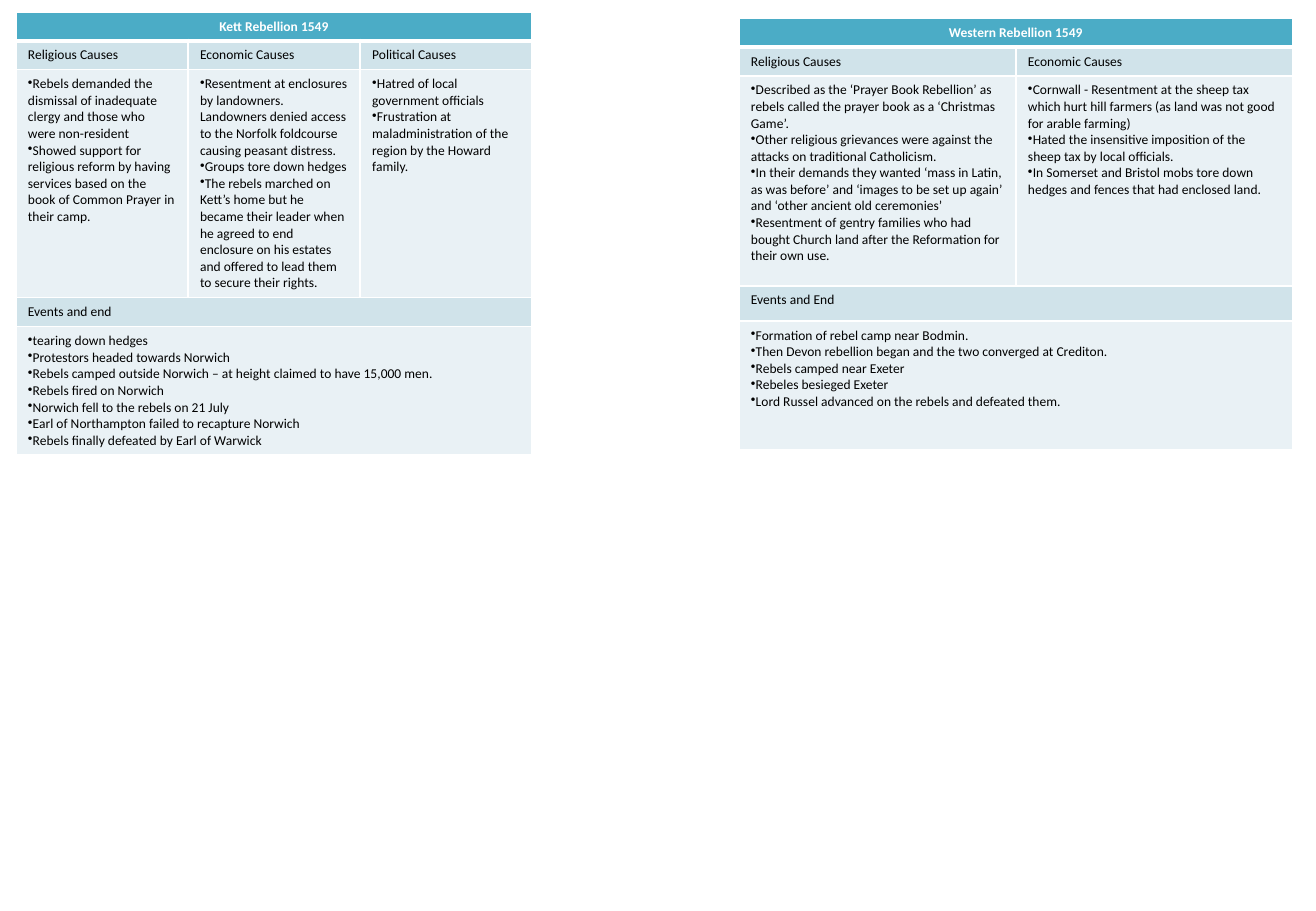
from lxml import etree
from pptx import Presentation, util as u
from pptx.dml.color import RGBColor
from pptx.enum import text
from pptx.oxml import ns

HUES = {"head": "4BACC6", "label": "D0E3EA", "body": "E9F1F5",
        "white": "FFFFFF", "black": "000000"}


def edge(cell, side, width):
    line = etree.Element(ns.qn("a:ln" + side), w=str(u.Pt(width)))
    fill = etree.SubElement(line, ns.qn("a:solidFill"))
    etree.SubElement(fill, ns.qn("a:srgbClr"), val=HUES["white"])
    cell._tc.get_or_add_tcPr().insert("LRTB".index(side), line)


def write(cell, lines, kind):
    # Header is bold, white and centred; body lines carry bullets
    head = kind == "head"
    if head:
        cell.vertical_anchor = text.MSO_ANCHOR.MIDDLE
    frame = cell.text_frame
    for i, line in enumerate(lines):
        para = frame.add_paragraph() if i else frame.paragraphs[0]
        para.alignment = text.PP_ALIGN.CENTER if head else text.PP_ALIGN.LEFT
        if kind == "body":
            etree.SubElement(para._p.get_or_add_pPr(), ns.qn("a:buChar"), char="•")
        run = para.add_run()
        run.text = line
        run.font.name = "Calibri"
        run.font.size = u.Pt(8)
        run.font.bold = head
        run.font.color.rgb = RGBColor.from_string(HUES["white" if head else "black"])


# Content: each row is a list of cells, each cell a list of lines
kett = [
    [["Kett Rebellion 1549"]],
    [["Religious Causes"], ["Economic Causes"], ["Political Causes"]],
    [["Rebels demanded the dismissal of inadequate clergy and those who were non-resident",
      "Showed support for religious reform by having services based on the book of "
      "Common Prayer in their camp."],
     ["Resentment at enclosures by landowners. Landowners denied access to the Norfolk "
      "foldcourse causing peasant distress.",
      "Groups tore down hedges",
      "The rebels marched on Kett’s home but he became their leader when he agreed to end "
      "enclosure on his estates and offered to lead them to secure their rights."],
     ["Hatred of local government officials",
      "Frustration at maladministration of the region by the Howard family."]],
    [["Events and end"]],
    [["tearing down hedges",
      "Protestors headed towards Norwich",
      "Rebels camped outside Norwich – at height claimed to have 15,000 men.",
      "Rebels fired on Norwich",
      "Norwich fell to the rebels on 21 July",
      "Earl of Northampton failed to recapture Norwich",
      "Rebels finally defeated by Earl of Warwick"]],
]
west = [
    [["Western Rebellion 1549"]],
    [["Religious Causes"], ["Economic Causes"]],
    [["Described as the ‘Prayer Book Rebellion’ as rebels called the prayer book as a "
      "‘Christmas Game’.",
      "Other religious grievances were against the attacks on traditional Catholicism.",
      "In their demands they wanted ‘mass in Latin, as was before’ and ‘images to be set up "
      "again’ and ‘other ancient old ceremonies’",
      "Resentment of gentry families who had bought Church land after the Reformation for "
      "their own use."],
     ["Cornwall - Resentment at the sheep tax which hurt hill farmers (as land was not good "
      "for arable farming)",
      "Hated the insensitive imposition of the sheep tax by local officials.",
      "In Somerset and Bristol mobs tore down hedges and fences that had enclosed land."]],
    [["Events and End"]],
    [["Formation of rebel camp near Bodmin.",
      "Then Devon rebellion began and the two converged at Crediton.",
      "Rebels camped near Exeter",
      "Rebeles besieged Exeter",
      "Lord Russel advanced on the rebels and defeated them."]],
]
kinds = ["head", "label", "body", "label", "body"]

# Slide
deck = Presentation()
deck.slide_width, deck.slide_height = u.Inches(10.83), u.Inches(7.5)
slide = deck.slides.add_slide(deck.slide_layouts[6])

# One table per rebellion: rows, left, top, width, row heights
for rows, left, top, width, highs in [
    (kett, 0.13, 0.1, 4.25, [0.23, 0.23, 1.87, 0.24, 1.05]),
    (west, 6.08, 0.15, 4.56, [0.23, 0.23, 1.73, 0.29, 1.06]),
]:
    count = len(rows[1])
    table = slide.shapes.add_table(len(rows), count, u.Inches(left), u.Inches(top),
                                   u.Inches(width), u.Inches(sum(highs))).table
    for r, (row, kind, high) in enumerate(zip(rows, kinds, highs)):
        table.rows[r].height = u.Inches(high)
        for c in range(count):
            cell = table.cell(r, c)
            cell.fill.solid()
            cell.fill.fore_color.rgb = RGBColor.from_string(HUES[kind])
            for side in "LRTB":
                thick = (r, side) in [(0, "B"), (1, "T")]
                edge(cell, side, 3 if thick else 1)
        if len(row) == 1:
            table.cell(r, 0).merge(table.cell(r, count - 1))
        for c, lines in enumerate(row):
            write(table.cell(r, c), lines, kind)

deck.save("out.pptx")
